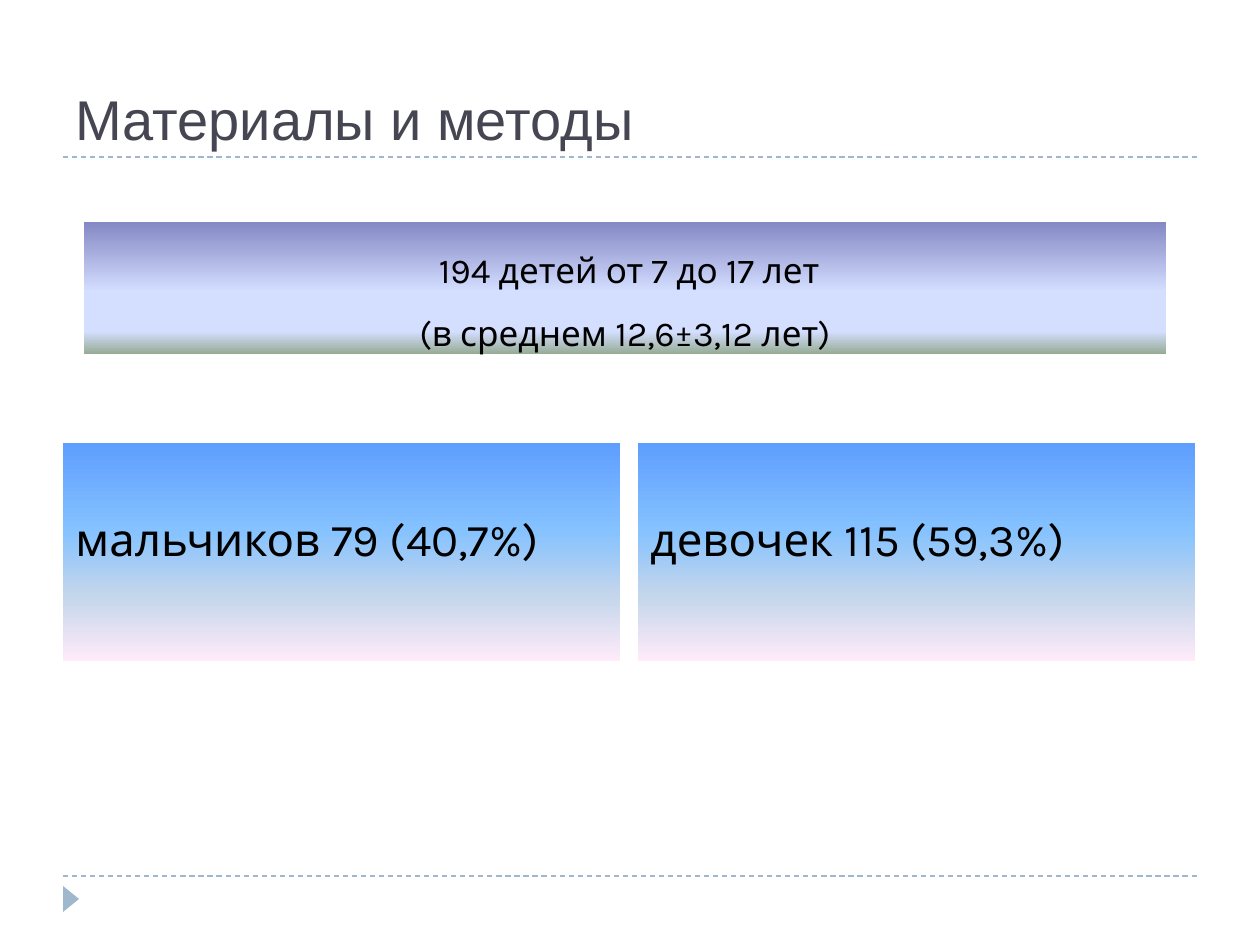
from dataclasses import dataclass

from lxml.etree import SubElement
from pptx import Presentation
from pptx.dml.color import RGBColor
from pptx.enum.dml import MSO_LINE
from pptx.enum.shapes import MSO_CONNECTOR, MSO_SHAPE
from pptx.enum.text import MSO_ANCHOR, PP_ALIGN
from pptx.oxml.ns import qn
from pptx.util import Emu, Pt

EMU_PER_PX = 914400 / 126


def px(length):
    return Emu(round(length * EMU_PER_PX))


@dataclass(frozen=True)
class Theme:
    title_font: str = "Arial"
    body_font: str = "Karla"
    title_color: str = "464653"
    text_color: str = "000000"
    accent: str = "9FB8CD"
    title_size: int = 32
    group_size: int = 26
    sample_size: int = 20
    sample_gradient: tuple = ((0, "8488C4"), (53, "D4DEFF"), (83, "D4DEFF"), (100, "96AB94"))
    group_gradient: tuple = ((0, "5E9EFF"), (40, "85C2FF"), (70, "C4D6EB"), (100, "FFEBFA"))


class SlideBuilder:
    def __init__(self, slide, theme):
        self.slide = slide
        self.theme = theme

    def set_text(self, frame, lines, font, size, color, align=PP_ALIGN.LEFT, spacing=1.0):
        frame.word_wrap = True
        frame.text = "\n".join(lines)
        for paragraph in frame.paragraphs:
            paragraph.alignment = align
            paragraph.line_spacing = spacing
            for run in paragraph.runs:
                run.font.name = font
                run.font.size = Pt(size)
                run.font.color.rgb = RGBColor.from_string(color)

    def title(self, text, left, top, width, height):
        box = self.slide.shapes.add_textbox(px(left), px(top), px(width), px(height))
        box.text_frame.vertical_anchor = MSO_ANCHOR.BOTTOM
        theme = self.theme
        self.set_text(box.text_frame, [text], theme.title_font, theme.title_size, theme.title_color)

    def dashed_rule(self, left, right, y):
        rule = self.slide.shapes.add_connector(
            MSO_CONNECTOR.STRAIGHT, px(left), px(y), px(right), px(y))
        rule.line.color.rgb = RGBColor.from_string(self.theme.accent)
        rule.line.width = Pt(0.75)
        rule.line.dash_style = MSO_LINE.DASH
        SubElement(rule._element.spPr, qn("a:effectLst"))

    def shape(self, kind, left, top, width, height):
        shape = self.slide.shapes.add_shape(kind, px(left), px(top), px(width), px(height))
        shape.shadow.inherit = False
        shape.line.fill.background()
        return shape

    def marker(self, left, top, width, height):
        marker = self.shape(MSO_SHAPE.ISOSCELES_TRIANGLE, left, top, width, height)
        marker.rotation = 90
        marker.fill.solid()
        marker.fill.fore_color.rgb = RGBColor.from_string(self.theme.accent)

    def panel(self, lines, box, gradient, size, inset_top, **layout):
        panel = self.shape(MSO_SHAPE.RECTANGLE, *box)
        # A gradient from top to bottom with any number of stops
        panel.fill.gradient()
        panel.fill.gradient_angle = 270
        stops = panel._element.spPr.find(qn("a:gradFill")).find(qn("a:gsLst"))
        for stop in list(stops):
            stops.remove(stop)
        for percent, color in gradient:
            stop = SubElement(stops, qn("a:gs"), pos=str(percent * 1000))
            SubElement(stop, qn("a:srgbClr"), val=color)
        frame = panel.text_frame
        frame.vertical_anchor = MSO_ANCHOR.TOP
        frame.margin_top = px(inset_top)
        self.set_text(frame, lines, self.theme.body_font, size, self.theme.text_color, **layout)


def main():
    presentation = Presentation()
    presentation.slide_width, presentation.slide_height = px(1260), px(945)
    theme = Theme()
    builder = SlideBuilder(presentation.slides.add_slide(presentation.slide_layouts[6]), theme)
    left, right = 63, 1197

    # Frame of the page
    for y in (876, 157):
        builder.dashed_rule(left, right, y)
    builder.marker(58, 891, 26, 16)
    builder.title("Материалы и методы", left, 32, right - left, 126)

    # Boys and girls
    group_width, gap = 557, 18
    for column, group in enumerate(("мальчиков 79 (40,7%)", "девочек 115 (59,3%)")):
        box = (left + column * (group_width + gap), 443, group_width, 218)
        builder.panel([group], box, theme.group_gradient, theme.group_size, 68)

    # Whole sample
    builder.panel(
        [" 194 детей от 7 до 17 лет", " (в среднем 12,6±3,12 лет) "],
        (84, 222, 1082, 132), theme.sample_gradient, theme.sample_size, 6,
        align=PP_ALIGN.CENTER, spacing=1.5)

    presentation.save("out.pptx")


if __name__ == "__main__":
    main()
